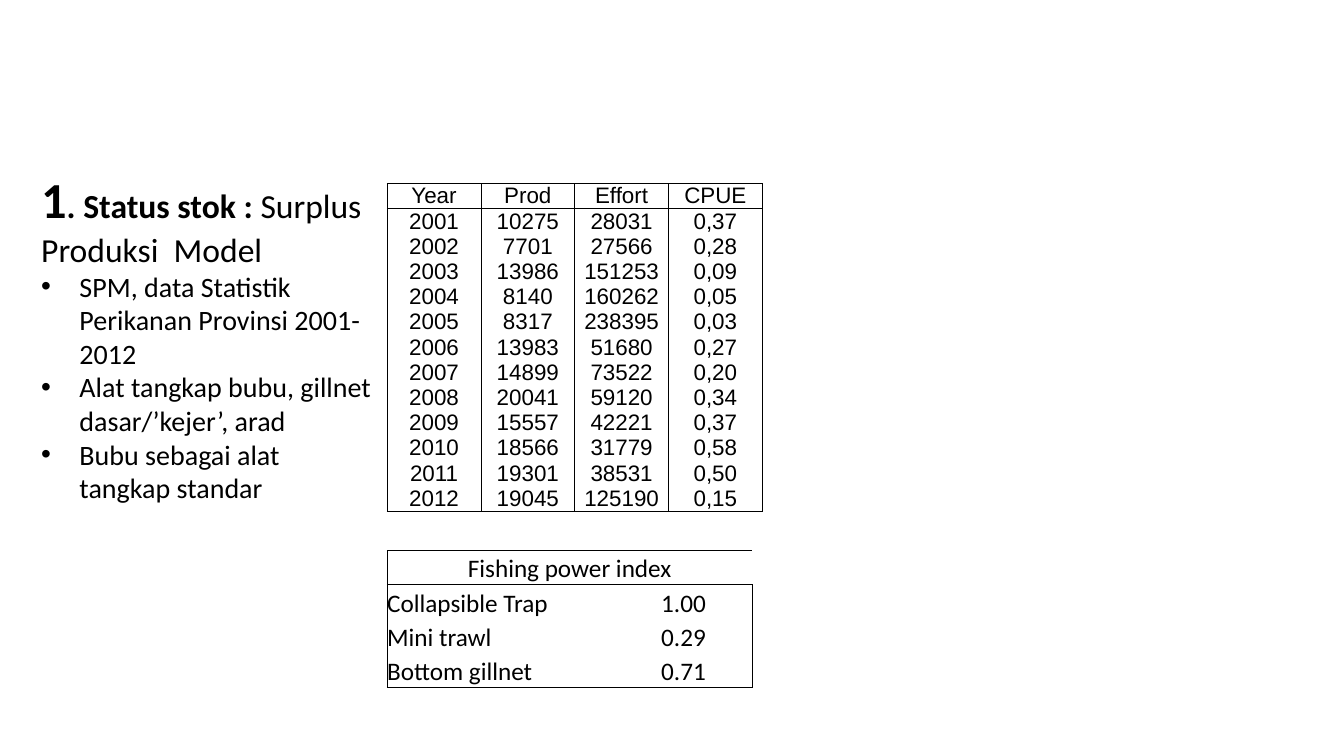
from lxml.etree import SubElement
from pptx import Presentation
from pptx.dml.color import RGBColor
from pptx.enum.text import MSO_ANCHOR, PP_ALIGN
from pptx.oxml.ns import qn
from pptx.util import Inches, Pt

BLACK = RGBColor(0, 0, 0)
CATCH_ROWS = [
    ("Year", "Prod", "Effort", "CPUE"),
    ("2001", "10275", "28031", "0,37"),
    ("2002", "7701", "27566", "0,28"),
    ("2003", "13986", "151253", "0,09"),
    ("2004", "8140", "160262", "0,05"),
    ("2005", "8317", "238395", "0,03"),
    ("2006", "13983", "51680", "0,27"),
    ("2007", "14899", "73522", "0,20"),
    ("2008", "20041", "59120", "0,34"),
    ("2009", "15557", "42221", "0,37"),
    ("2010", "18566", "31779", "0,58"),
    ("2011", "19301", "38531", "0,50"),
    ("2012", "19045", "125190", "0,15"),
]
POWER_ROWS = [
    ("Fishing power index", ""),
    ("Collapsible Trap", "1.00"),
    ("Mini trawl", "0.29"),
    ("Bottom gillnet", "0.71"),
]
HEADING = [("1", 36, True), (". Status stok : ", 24, True),
           ("Surplus Produksi  Model", 24, False)]
POINTS = [
    ("SPM, data Statistik Perikanan Provinsi 2001-2012", True),
    ("Alat tangkap bubu, gillnet dasar/’kejer’, arad", True),
    ("Bubu sebagai alat", True),
    ("tangkap standar", False),
]


def set_font(font, name, size, bold=False):
    font.name = name
    font.size = Pt(size)
    font.bold = bold
    font.color.rgb = BLACK


def set_borders(cell, sides):
    properties = cell._tc.get_or_add_tcPr()
    for side in "LRTB":
        line = SubElement(properties, qn(f"a:ln{side}"), w=str(Pt(0.5)))
        if side in sides:
            fill = SubElement(line, qn("a:solidFill"))
            SubElement(fill, qn("a:srgbClr"), val=str(BLACK))
        else:
            SubElement(line, qn("a:noFill"))


def cell_sides(row, column, row_count, column_count, column_lines):
    sides = ""
    if column_lines or column == 0:
        sides += "L"
    if column_lines or column == column_count - 1:
        sides += "R"
    if row <= 1:
        sides += "T"
    if row in (0, row_count - 1):
        sides += "B"
    return sides


def add_grid(page, rows, left, top, widths, row_height, font_name, size,
             column_lines=True, first_alignment=PP_ALIGN.CENTER):
    frame = page.shapes.add_table(
        len(rows), len(widths), Inches(left), Inches(top),
        Inches(sum(widths)), Inches(row_height * len(rows)))
    table = frame.table
    table.first_row = False
    table.horz_banding = False
    for column, width in zip(table.columns, widths):
        column.width = Inches(width)
    for row, values in enumerate(rows):
        table.rows[row].height = Inches(row_height)
        for column, value in enumerate(values):
            cell = table.cell(row, column)
            cell.margin_left = cell.margin_right = 0
            cell.margin_top = cell.margin_bottom = 0
            cell.vertical_anchor = MSO_ANCHOR.BOTTOM
            set_borders(cell, cell_sides(row, column, len(rows), len(widths), column_lines))
            cell.fill.background()
            cell.text = value
            para = cell.text_frame.paragraphs[0]
            centred = row == 0 or column > 0
            para.alignment = PP_ALIGN.CENTER if centred else first_alignment
            set_font(para.font, font_name, size)
    return table


def indent_point(para, bulleted):
    properties = para._p.get_or_add_pPr()
    properties.set("marL", str(Inches(0.38)))
    properties.set("indent", str(Inches(-0.38) if bulleted else 0))
    if bulleted:
        SubElement(properties, qn("a:buFont"), typeface="Arial")
        SubElement(properties, qn("a:buChar"), char="•")


def add_stock_status(page):
    box = page.shapes.add_textbox(Inches(0.31), Inches(1.62), Inches(3.75), Inches(3.47))
    frame = box.text_frame
    frame.word_wrap = True
    heading = frame.paragraphs[0]
    for text, size, bold in HEADING:
        span = heading.add_run()
        span.text = text
        set_font(span.font, "Calibri", size, bold)
    for text, bulleted in POINTS:
        para = frame.add_paragraph()
        para.text = text
        set_font(para.font, "Calibri", 20)
        indent_point(para, bulleted)


def main():
    deck = Presentation()
    deck.slide_width = Inches(13.33)
    deck.slide_height = Inches(7.5)
    page = deck.slides.add_slide(deck.slide_layouts[6])
    power = add_grid(page, POWER_ROWS, 3.84, 5.46, [2.26, 1.36], 0.34, "Calibri", 18,
                     column_lines=False, first_alignment=PP_ALIGN.LEFT)
    power.cell(0, 0).merge(power.cell(0, 1))
    add_grid(page, CATCH_ROWS, 3.84, 1.82, [0.93] * 4, 0.25, "Arial", 16)
    add_stock_status(page)
    deck.save("out.pptx")


if __name__ == "__main__":
    main()
